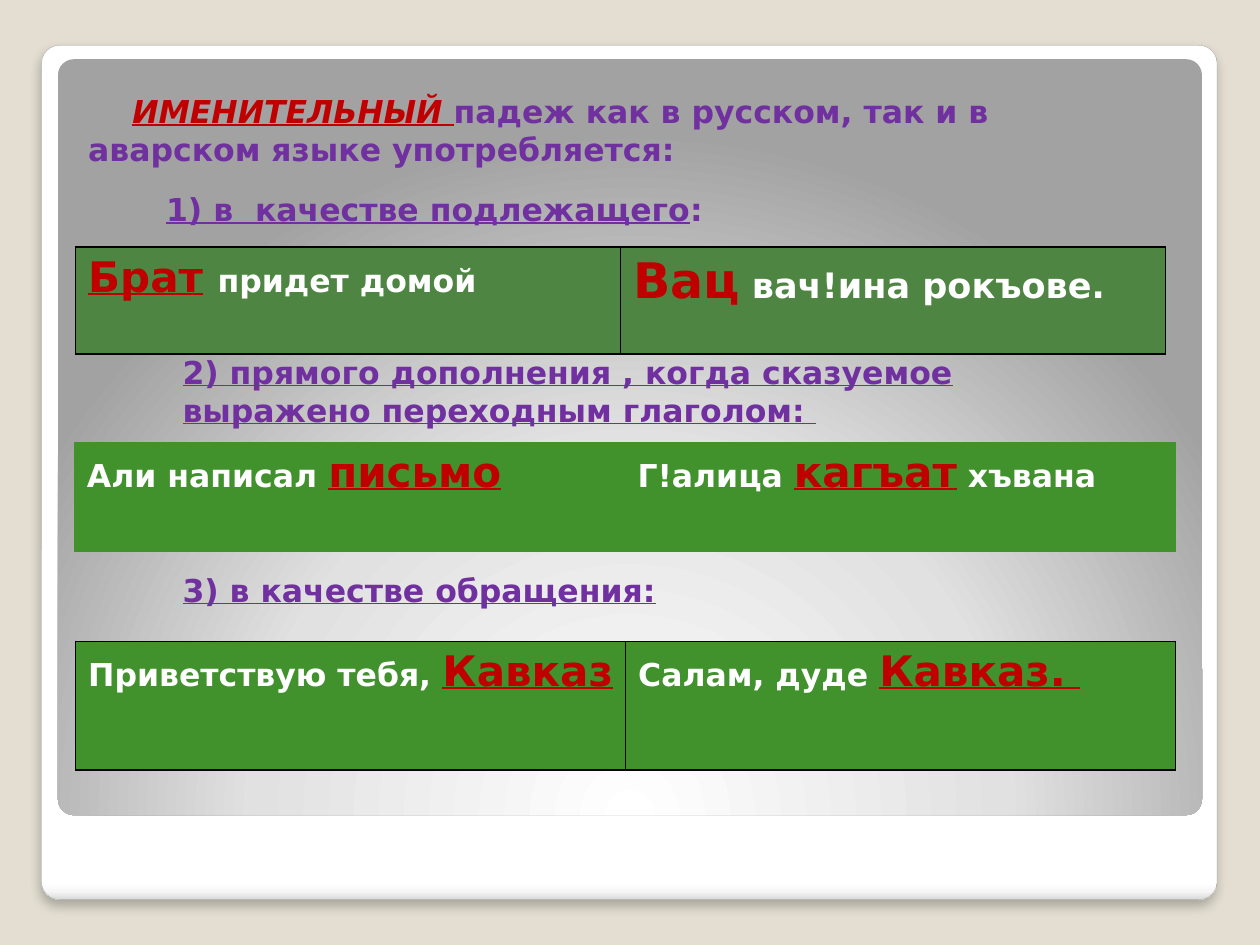
"""Build a slide on the uses of the nominative case in Russian and Avar."""
from lxml import etree
from pptx import Presentation
from pptx.dml.color import RGBColor
from pptx.enum.shapes import MSO_SHAPE
from pptx.enum.text import MSO_ANCHOR, MSO_AUTO_SIZE, PP_ALIGN
from pptx.oxml.ns import qn
from pptx.util import Inches, Pt

ROUNDED = MSO_SHAPE.ROUNDED_RECTANGLE
TOP = MSO_ANCHOR.TOP
LEFT = PP_ALIGN.LEFT
NO_FIT = MSO_AUTO_SIZE.NONE
FONT = "DejaVu Sans"
RED, PURPLE, WHITE, BLACK = "C00000", "7030A0", "FFFFFF", "000000"
MOSS, GREEN = "4E8542", "41922D"

ACCENT = {"color": RED, "size": 24, "underline": True}
PLAIN = {"color": WHITE}
RULE = {"color": PURPLE, "underline": True}

HEADING = [
    ("\tИМЕНИТЕЛЬНЫЙ", {"color": RED, "italic": True, "underline": True}),
    (" ", {"color": RED, "underline": True}),
    ("падеж как в русском, так и в аварском языке употребляется:", {"color": PURPLE}),
]
RULES = [
    {"at": (1.22, 1.46, 4.56, 0.4), "tab": None,
     "spans": [("1) в  качестве подлежащего", RULE), (":", {"color": PURPLE})]},
    {"at": (1.35, 2.75, 7.82, 0.71), "tab": None,
     "spans": [("2) прямого дополнения , когда сказуемое выражено переходным глаголом: ", RULE)]},
    {"at": (1.35, 4.48, 4.85, 0.4), "tab": 4.37,
     "spans": [("3) в качестве обращения:\t", RULE)]},
]
EXAMPLES = [
    {"at": (0.6, 1.96, 8.65, 0.85), "fill": MOSS, "border": BLACK, "cells": [
        [("Брат", ACCENT), (" ", {"color": RED, "size": 24}), ("придет домой", PLAIN)],
        [("Вац", {"color": RED, "size": 28}), (" вач!ина рокъове.", {"color": WHITE, "size": 20})]]},
    {"at": (0.59, 3.51, 8.74, 0.87), "fill": GREEN, "border": None, "cells": [
        [("Али написал ", PLAIN), ("письмо", ACCENT)],
        [("Г!алица ", PLAIN), ("кагъат", ACCENT), (" хъвана", PLAIN)]]},
    {"at": (0.6, 5.09, 8.73, 1.02), "fill": GREEN, "border": BLACK, "cells": [
        [("Приветствую тебя, ", PLAIN), ("Кавказ", ACCENT)],
        [("Салам, дуде ", PLAIN), ("Кавказ. ", ACCENT)]]},
]
CARD = {"at": (0.33, 0.36, 9.33, 6.78),
        "stops": [(0, WHITE), (98, WHITE), (99, "F7F7F7"), (100, "DADADA")]}
PANEL = {"at": (0.46, 0.47, 9.08, 6),
         "stops": [(0, WHITE), (55, "E1E1E1"), (100, "A2A2A2")]}


def rgb(value):
    return RGBColor.from_string(value)


def inches(lengths):
    return [Inches(length) for length in lengths]


def add(parent, tag, **attributes):
    values = {name: str(value) for name, value in attributes.items()}
    return etree.SubElement(parent, qn(tag), values)


def add_span(para, text, color, size=18, underline=False, italic=False):
    span = para.add_run()
    span.text = text
    font = span.font
    font.name, font.size, font.bold = FONT, Pt(size), True
    font.italic, font.underline = italic, underline
    font.color.rgb = rgb(color)


def write(frame, spans, tab=None):
    frame.word_wrap = True
    para = frame.paragraphs[0]
    para.alignment = LEFT
    for text, style in spans:
        add_span(para, text, **style)
    if tab:
        stops = add(para._p.get_or_add_pPr(), "a:tabLst")
        add(stops, "a:tab", pos=Inches(tab), algn="l")


def add_panel(page, at, stops, radial=False):
    panel = page.shapes.add_shape(ROUNDED, *inches(at))
    panel.adjustments[0] = 0.021
    panel.shadow.inherit = False
    panel.line.fill.background()
    panel.fill.background()
    blank = panel.element.spPr.find(qn("a:noFill"))
    gradient = etree.Element(qn("a:gradFill"), rotWithShape="1")
    stop_list = add(gradient, "a:gsLst")
    for share, color in stops:
        add(add(stop_list, "a:gs", pos=share * 1000), "a:srgbClr", val=color)
    if radial:
        circle = add(gradient, "a:path", path="circle")
        add(circle, "a:fillToRect", l=50000, t=175000, r=50000, b=-75000)
    else:
        add(gradient, "a:lin", ang=90 * 60000, scaled=0)
    blank.getparent().replace(blank, gradient)
    return panel


def add_shadow(shape):
    effects = shape.element.spPr.find(qn("a:effectLst"))
    shadow = add(effects, "a:outerShdw", blurRad=Pt(6), dist=Pt(4), dir=90 * 60000,
                 algn="t", rotWithShape=0)
    add(add(shadow, "a:srgbClr", val=BLACK), "a:alpha", val=25000)


def set_borders(cell, color):
    properties = cell._tc.get_or_add_tcPr()
    for index, side in enumerate(("a:lnL", "a:lnR", "a:lnT", "a:lnB")):
        edge = etree.Element(qn(side), w=str(Pt(1)))
        if color:
            add(add(edge, "a:solidFill"), "a:srgbClr", val=color)
        else:
            add(edge, "a:noFill")
        properties.insert(index, edge)


def add_example(page, at, fill, border, cells):
    table = page.shapes.add_table(1, len(cells), *inches(at)).table
    table.first_row = table.horz_banding = False
    for cell, spans in zip(table.rows[0].cells, cells):
        cell.fill.solid()
        cell.fill.fore_color.rgb = rgb(fill)
        set_borders(cell, border)
        write(cell.text_frame, spans)


def main():
    deck = Presentation()
    deck.slide_width, deck.slide_height = inches((10, 7.5))
    page = deck.slides.add_slide(deck.slide_layouts[5])
    page.background.fill.solid()
    page.background.fill.fore_color.rgb = rgb("E3DED1")

    card = add_panel(page, **CARD)
    card.line.color.rgb = rgb("A4A4A4")
    card.line.width = Pt(0.16)
    add_shadow(card)
    panel = add_panel(page, **PANEL, radial=True)

    title = page.shapes.title
    panel.element.addnext(title.element)
    title.left, title.top, title.width, title.height = inches((0.6, 0.68, 8.43, 0.71))
    title.text_frame.vertical_anchor = TOP
    title.text_frame.auto_size = NO_FIT
    write(title.text_frame, HEADING, tab=0.35)

    for rule, example in zip(RULES, EXAMPLES):
        box = page.shapes.add_textbox(*inches(rule["at"]))
        write(box.text_frame, rule["spans"], rule["tab"])
        add_example(page, **example)
    deck.save("out.pptx")


if __name__ == "__main__":
    main()
